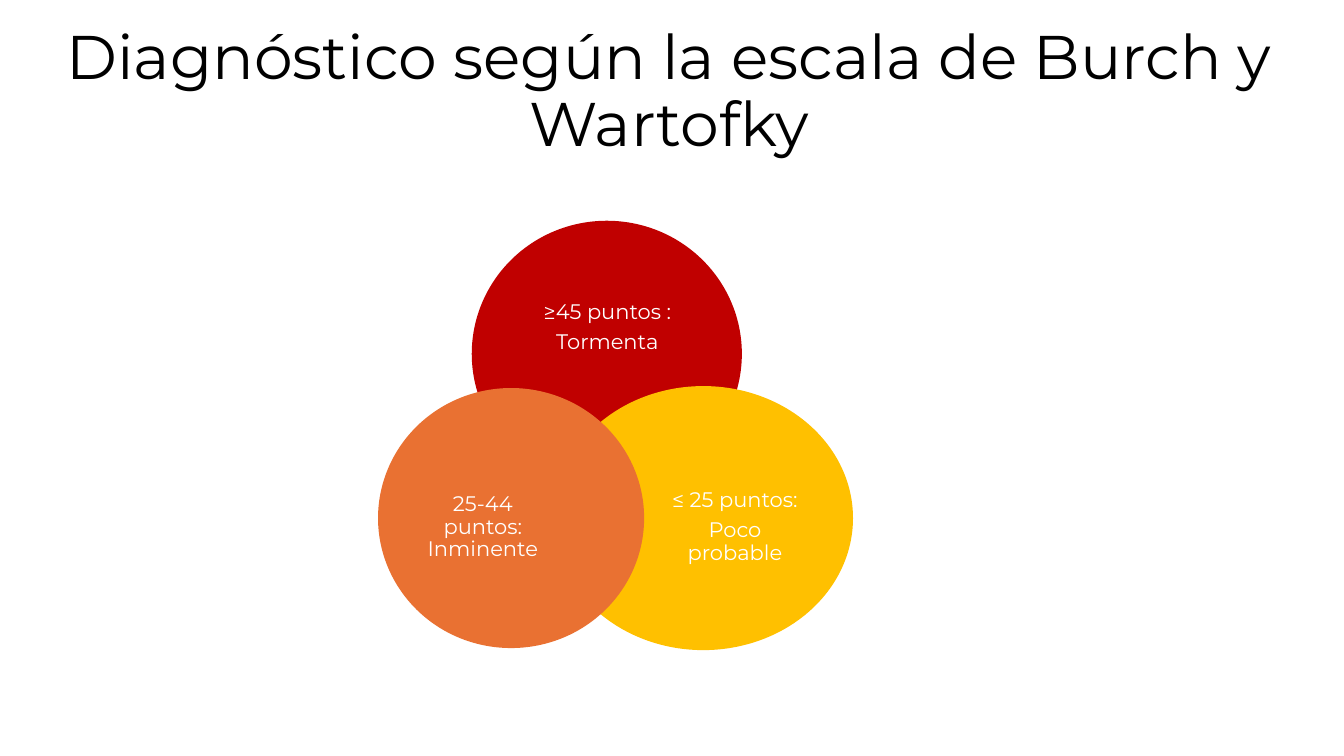
from pptx import Presentation
from pptx.dml.color import RGBColor
from pptx.enum.shapes import MSO_SHAPE
from pptx.enum.text import MSO_ANCHOR, MSO_AUTO_SIZE, PP_ALIGN
from pptx.util import Inches, Pt

OVAL = MSO_SHAPE.OVAL
MIDDLE = MSO_ANCHOR.MIDDLE
CENTER = PP_ALIGN.CENTER
NO_FIT = MSO_AUTO_SIZE.NONE

WIDE, HIGH = Inches(13.33), Inches(7.5)
FONT = "Montserrat"
BLACK, WHITE = "000000", "FFFFFF"
RED, GOLD, ORANGE = "C00000", "FFC000", "E97132"

# Fill, circle area, label area, label lines; areas in percent of the slide
LEVELS = [
    (RED, (35.1, 29.2, 20.1, 35.2), (39.98, 37.73, 10.43, 11.2),
     ["≥45 puntos :", "Tormenta"]),
    (GOLD, (41.19, 51.07, 22.28, 34.93), (49.96, 62.93, 9.45, 13.6),
     ["≤ 25 puntos:", "Poco probable"]),
    (ORANGE, (28.13, 51.33, 19.8, 34.4), (31.73, 63.07, 8.4, 13.33),
     ["25-44 puntos: Inminente"]),
]


def color(code):
    return RGBColor.from_string(code)


def area(left, top, width, height):
    """Turn percent of the slide into lengths."""
    return [int(side * share / 100) for side, share in
            zip((WIDE, HIGH, WIDE, HIGH), (left, top, width, height))]


def write(frame, lines, size, code, after=0):
    frame.word_wrap = True
    frame.auto_size = NO_FIT
    frame.vertical_anchor = MIDDLE
    for i, line in enumerate(lines):
        para = frame.add_paragraph() if i else frame.paragraphs[0]
        para.alignment = CENTER
        para.line_spacing = 0.9
        para.space_before = Pt(0)
        para.space_after = Pt(after)
        run = para.add_run()
        run.text = line
        run.font.name = FONT
        run.font.size = Pt(size)
        run.font.color.rgb = color(code)


def add_title(slide, text):
    title = slide.shapes.title
    title.left, title.top, title.width, title.height = area(
        2.85, 2.8, 93.92, 19.07)
    write(title.text_frame, [text], 44, BLACK)


def add_circle(shapes, box, fill):
    circle = shapes.add_shape(OVAL, *area(*box))
    circle.shadow.inherit = False
    circle.fill.solid()
    circle.fill.fore_color.rgb = color(fill)
    circle.line.fill.background()


def add_label(shapes, box, lines):
    frame = shapes.add_textbox(*area(*box)).text_frame
    frame.margin_left = frame.margin_right = 0
    frame.margin_top = frame.margin_bottom = 0
    write(frame, lines, 15, WHITE, after=5.25)


def main():
    deck = Presentation()
    deck.slide_width, deck.slide_height = WIDE, HIGH
    slide = deck.slides.add_slide(deck.slide_layouts[5])
    add_title(slide, "Diagnóstico según la escala de Burch y Wartofky")
    venn = slide.shapes.add_group_shape().shapes
    for fill, circle, label, lines in LEVELS:
        add_circle(venn, circle, fill)
        add_label(venn, label, lines)
    deck.save("out.pptx")


if __name__ == "__main__":
    main()
